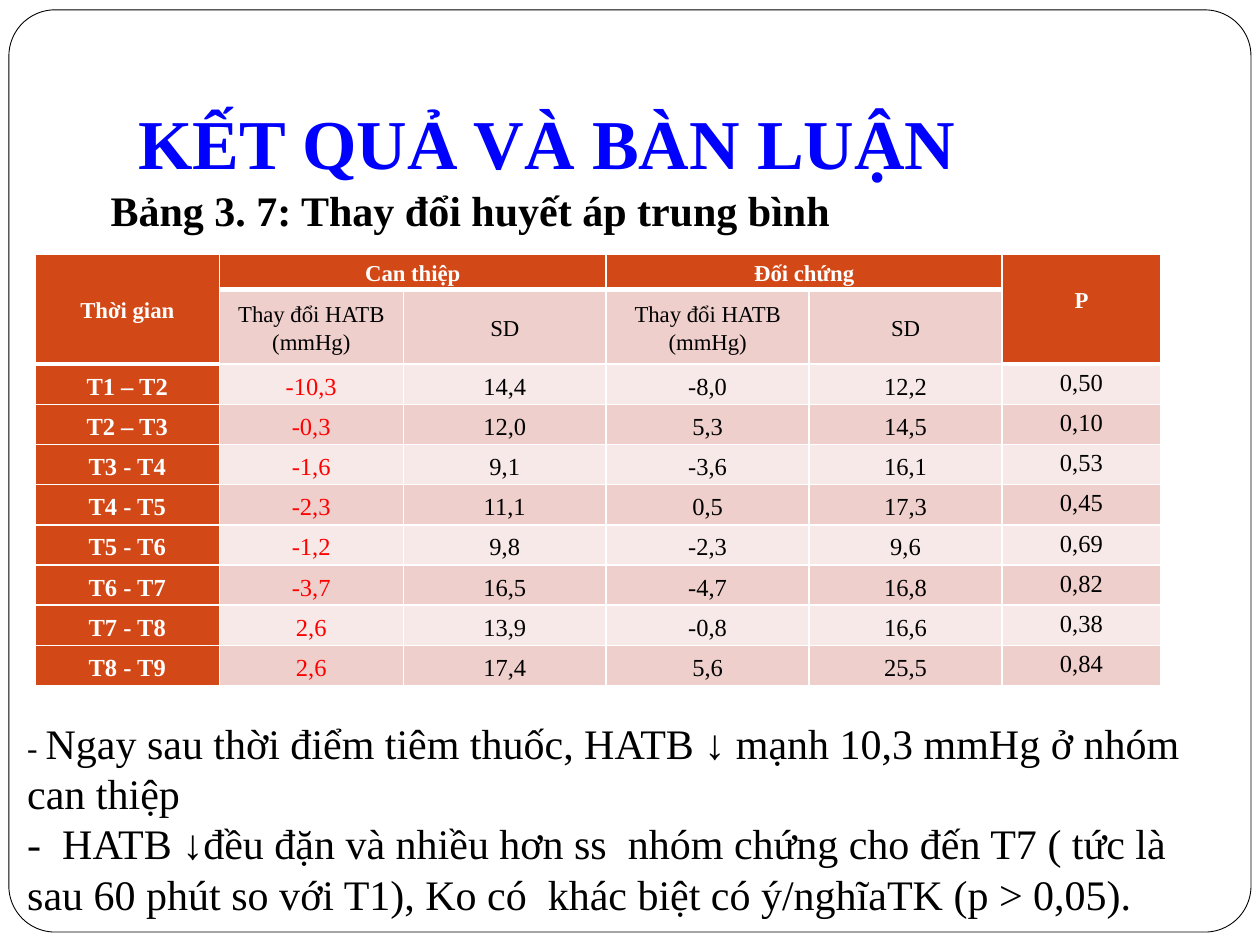
from lxml import etree
from pptx import Presentation
from pptx.dml.color import RGBColor
from pptx.enum import shapes, text
from pptx.oxml import ns
from pptx.util import Cm, Pt

FONT = "Times New Roman"
COLORS = {
    "white": "FFFFFF",
    "black": "000000",
    "title": "0000FF",
    "header": "D34817",
    "dark band": "EFCFCC",
    "light band": "F7E9E8",
    "highlight": "FF0000",
}
COLUMN_WIDTHS = [3.71, 3.71, 4.09, 4.09, 3.89, 3.2]
ROW_HEIGHTS = [0.71, 1.5] + [0.81] * 8
CHANGE = "Thay đổi HATB (mmHg)"
ROWS = [
    ["Thời gian", "Can thiệp", "", "Đối chứng", "", "P"],
    ["", CHANGE, "SD", CHANGE, "SD", ""],
    ["T1 – T2", "-10,3", "14,4", "-8,0", "12,2", "0,50"],
    ["T2 – T3", "-0,3", "12,0", "5,3", "14,5", "0,10"],
    ["T3 - T4", "-1,6", "9,1", "-3,6", "16,1", "0,53"],
    ["T4 - T5", "-2,3", "11,1", "0,5", "17,3", "0,45"],
    ["T5 - T6", "-1,2", "9,8", "-2,3", "9,6", "0,69"],
    ["T6 - T7", "-3,7", "16,5", "-4,7", "16,8", "0,82"],
    ["T7 - T8", "2,6", "13,9", "-0,8", "16,6", "0,38"],
    ["T8 - T9", "2,6", "17,4", "5,6", "25,5", "0,84"],
]
# Merged header areas: first row, first column, last row, last column
MERGES = [(0, 0, 1, 0), (0, 1, 0, 2), (0, 3, 0, 4), (0, 5, 1, 5)]
P_COLUMN = 5


def rgb(name):
    return RGBColor.from_string(COLORS[name])


def format_run(run, size, color="black", bold=False):
    run.font.name = FONT
    run.font.size = Pt(size)
    run.font.bold = bold
    run.font.color.rgb = rgb(color)


def add_frame(slide):
    frame = slide.shapes.add_shape(
        shapes.MSO_SHAPE.ROUNDED_RECTANGLE, Cm(0.18), Cm(0.2), Cm(25.04), Cm(18.59))
    frame.adjustments[0] = 0.05
    frame.shadow.inherit = False
    frame.fill.solid()
    frame.fill.fore_color.rgb = rgb("white")
    frame.line.color.rgb = rgb("black")
    frame.line.width = Pt(0.5)
    # Send the frame behind the title
    slide.shapes._spTree.insert(2, frame._element)


def set_title(slide, wording):
    title = slide.shapes.title
    title.left, title.top, title.width, title.height = Cm(2.54), Cm(0.76), Cm(21.59), Cm(3.18)
    frame = title.text_frame
    frame.text = wording
    frame.auto_size = text.MSO_AUTO_SIZE.NONE
    frame.vertical_anchor = text.MSO_ANCHOR.BOTTOM
    frame.margin_bottom = Cm(0.25)
    paragraph = frame.paragraphs[0]
    paragraph.alignment = text.PP_ALIGN.LEFT
    format_run(paragraph.runs[0], 40, "title", bold=True)


def add_text_box(slide, left, top, width, height):
    frame = slide.shapes.add_textbox(Cm(left), Cm(top), Cm(width), Cm(height)).text_frame
    frame.word_wrap = True
    return frame


def add_caption(slide, wording):
    frame = add_text_box(slide, 0.71, 3.53, 22, 2.31)
    frame.margin_top = Cm(0.18)
    frame.text = wording
    paragraph = frame.paragraphs[0]
    paragraph._p.get_or_add_pPr().set("indent", str(Cm(1.27)))
    format_run(paragraph.runs[0], 24, bold=True)


def add_notes(slide, paragraphs):
    frame = add_text_box(slide, 0.3, 14.33, 24.41, 4.37)
    for index, runs in enumerate(paragraphs):
        paragraph = frame.add_paragraph() if index else frame.paragraphs[0]
        for wording, size in runs:
            run = paragraph.add_run()
            run.text = wording
            format_run(run, size)


def set_borders(cell, top, bottom):
    properties = cell._tc.get_or_add_tcPr()
    for side, points in (("L", 1), ("R", 1), ("T", top), ("B", bottom)):
        line = etree.SubElement(properties, ns.qn("a:ln" + side), w=str(Pt(points)))
        fill = etree.SubElement(line, ns.qn("a:solidFill"))
        etree.SubElement(fill, ns.qn("a:srgbClr"), val=COLORS["white"])


def cell_colors(row, column):
    """Return the fill and the text colour of a cell."""
    if row == 0 or column == 0 or (row == 1 and column == P_COLUMN):
        return "header", "white"
    fill = "dark band" if row % 2 else "light band"
    return fill, "highlight" if row > 1 and column == 1 else "black"


def format_cell(cell, row, column, wording):
    # The heavy rule runs below the dark header cells
    heavy_row = 1 if column in (0, P_COLUMN) else 0
    set_borders(cell, 3 if row == heavy_row + 1 else 1, 3 if row == heavy_row else 1)
    fill, color = cell_colors(row, column)
    cell.fill.solid()
    cell.fill.fore_color.rgb = rgb(fill)
    cell.margin_left = cell.margin_right = Cm(0.18)
    cell.margin_top = cell.margin_bottom = 0
    cell.vertical_anchor = text.MSO_ANCHOR.MIDDLE
    if column == P_COLUMN:
        cell.vertical_anchor = text.MSO_ANCHOR.TOP
        if row == 0:
            cell.margin_top = Cm(0.61)
    if not wording:
        return
    cell.text_frame.text = wording
    paragraph = cell.text_frame.paragraphs[0]
    paragraph.alignment = text.PP_ALIGN.CENTER
    paragraph.line_spacing = 1.15 if row < 2 else 1.2
    if row > 1:
        paragraph.space_before = Pt(2)
    format_run(paragraph.runs[0], 13 if row < 2 else 14, color, bold=color == "white")


def add_pressure_table(slide):
    table = slide.shapes.add_table(
        len(ROWS), len(COLUMN_WIDTHS), Cm(0.71), Cm(5.13),
        Cm(sum(COLUMN_WIDTHS)), Cm(sum(ROW_HEIGHTS))).table
    for column, width in zip(table.columns, COLUMN_WIDTHS):
        column.width = Cm(width)
    for row, height in zip(table.rows, ROW_HEIGHTS):
        row.height = Cm(height)
    for top, left, bottom, right in MERGES:
        table.cell(top, left).merge(table.cell(bottom, right))
    for row, values in enumerate(ROWS):
        for column, wording in enumerate(values):
            format_cell(table.cell(row, column), row, column, wording)


def main():
    presentation = Presentation()
    presentation.slide_width, presentation.slide_height = Cm(25.4), Cm(19.05)
    slide = presentation.slides.add_slide(presentation.slide_layouts[5])

    # Frame and headings
    add_frame(slide)
    set_title(slide, "KẾT QUẢ VÀ BÀN LUẬN")

    # Results
    add_pressure_table(slide)
    add_caption(slide, "Bảng 3. 7: Thay đổi huyết áp trung bình")

    # Discussion
    add_notes(slide, [
        [("- ", 18),
         ("Ngay sau thời điểm tiêm thuốc, HATB ↓ mạnh 10,3 mmHg ở nhóm can thiệp", 24)],
        [("-  HATB ↓đều đặn và nhiều hơn ss  nhóm chứng cho đến T7 ( tức là sau 60 phút "
          "so với T1), Ko có  khác biệt có ý/nghĩaTK (p > 0,05).", 24)],
    ])
    presentation.save("out.pptx")


if __name__ == "__main__":
    main()
